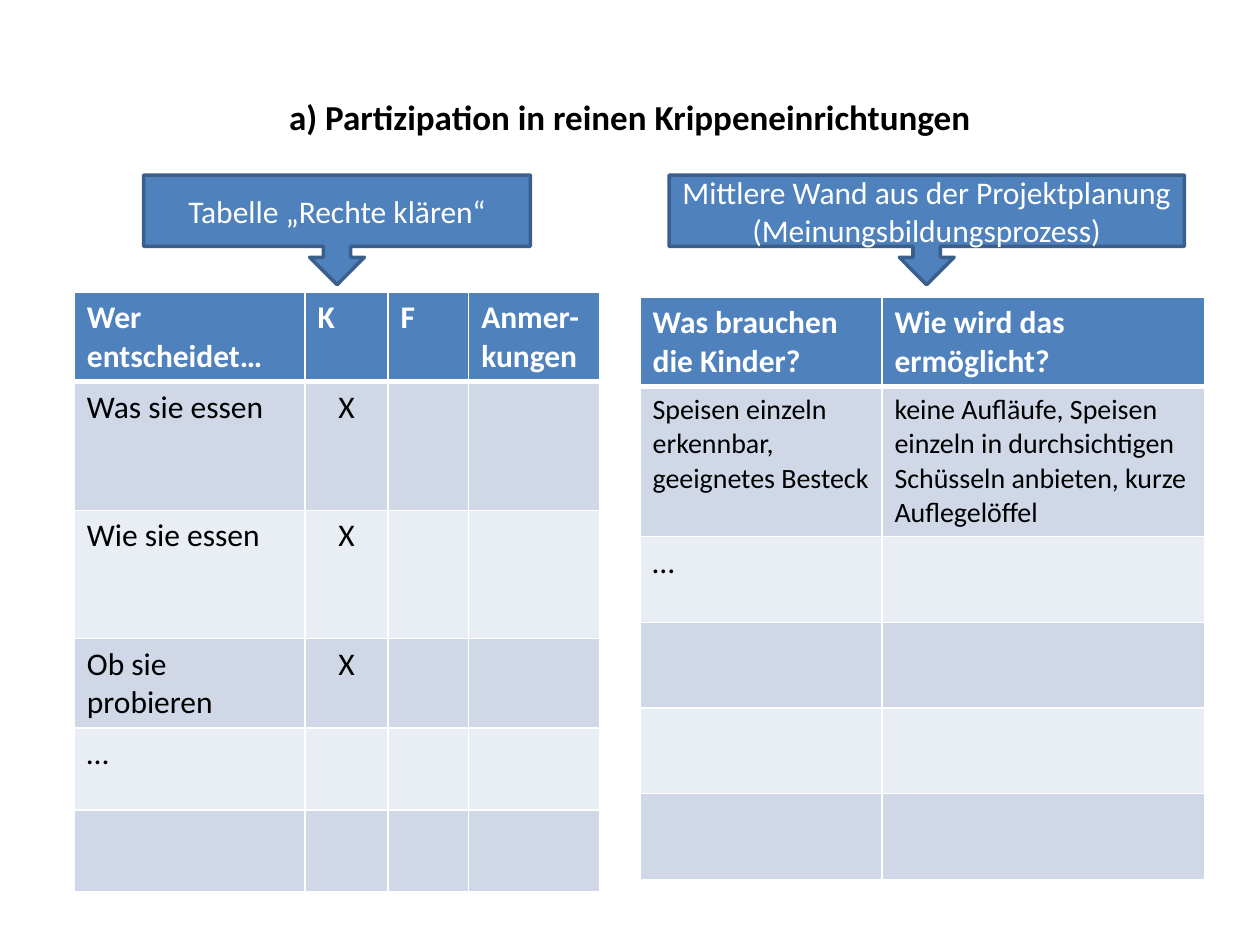
"""Build the slide on participation in nursery settings."""
from dataclasses import dataclass

from lxml.etree import SubElement
from pptx import Presentation
from pptx.dml.color import RGBColor
from pptx.enum.shapes import MSO_SHAPE
from pptx.enum.text import MSO_ANCHOR, PP_ALIGN
from pptx.oxml.ns import qn
from pptx.util import Inches, Pt

FONT = "Calibri"
COLORS = {
    "blue": "4F81BD",
    "outline": "3A5F8C",
    "band_dark": "D0D8E8",
    "band_light": "E9EDF4",
    "white": "FFFFFF",
    "black": "000000",
}


@dataclass
class Callout:
    left: float
    width: float
    text: str


@dataclass
class Grid:
    left: float
    top: float
    cols: list[float]
    rows: list[float]
    texts: list[list[str]]
    centered_col: int | None = None
    small_row: int | None = None


CALLOUTS = [
    Callout(1.14, 3.07, "Tabelle „Rechte klären“"),
    Callout(5.31, 4.09, "Mittlere Wand aus der Projektplanung (Meinungsbildungsprozess)"),
]
GRIDS = [
    Grid(0.59, 2.32, [1.83, 0.66, 0.64, 1.04], [0.71, 1.02, 1.02, 0.71, 0.65, 0.65], [
        ["Wer entscheidet…", "K", "F", "Anmer-kungen"],
        ["Was sie essen", "X"],
        ["Wie sie essen", "X"],
        ["Ob sie probieren", "X"],
        ["…"],
    ], centered_col=1),
    Grid(5.08, 2.36, [1.92, 2.56], [0.71, 1.19, 0.68, 0.68, 0.68, 0.68], [
        ["Was brauchen die Kinder?", "Wie wird das ermöglicht?"],
        ["Speisen einzeln erkennbar, geeignetes Besteck",
         "keine Aufläufe, Speisen einzeln in durchsichtigen Schüsseln anbieten, "
         "kurze Auflegelöffel"],
        ["…"],
    ], small_row=1),
]


def rgb(name: str) -> RGBColor:
    """Return a named colour."""
    return RGBColor.from_string(COLORS[name])


def add_text(tf, text: str, color: str, size: int = 18, bold: bool = False,
             align=PP_ALIGN.LEFT) -> None:
    """Write one run into the first paragraph of a text frame."""
    p = tf.paragraphs[0]
    p.alignment = align
    r = p.add_run()
    r.text = text
    r.font.name = FONT
    r.font.size = Pt(size)
    r.font.bold = bold
    r.font.color.rgb = rgb(color)


def add_title(s, text: str) -> None:
    """Draw the centred slide title."""
    tf = s.shapes.add_textbox(Inches(0.5), Inches(0.3), Inches(9), Inches(1.25)).text_frame
    tf.word_wrap = True
    tf.vertical_anchor = MSO_ANCHOR.MIDDLE
    add_text(tf, text, "black", 20, True, PP_ALIGN.CENTER)


def add_callout(s, callout: Callout) -> None:
    """Draw a heading box with an arrow pointing down."""
    sp = s.shapes.add_shape(MSO_SHAPE.DOWN_ARROW_CALLOUT, Inches(callout.left),
                            Inches(1.39), Inches(callout.width), Inches(0.87))
    sp.shadow.inherit = False
    sp.fill.solid()
    sp.fill.fore_color.rgb = rgb("blue")
    sp.line.color.rgb = rgb("outline")
    sp.line.width = Pt(2)
    tf = sp.text_frame
    tf.word_wrap = True
    tf.vertical_anchor = MSO_ANCHOR.MIDDLE
    add_text(tf, callout.text, "white", align=PP_ALIGN.CENTER)


def set_borders(cell, widths: dict[str, int]) -> None:
    """Give a cell white borders with the given widths in points."""
    tcPr = cell._tc.get_or_add_tcPr()
    for side, width in widths.items():
        ln = SubElement(tcPr, qn(f"a:ln{side}"), w=str(Pt(width)))
        fill = SubElement(ln, qn("a:solidFill"))
        SubElement(fill, qn("a:srgbClr"), val=COLORS["white"])


def add_grid(s, grid: Grid) -> None:
    """Draw a table with a header row and banded body rows."""
    table = s.shapes.add_table(len(grid.rows), len(grid.cols), Inches(grid.left),
                               Inches(grid.top), Inches(sum(grid.cols)),
                               Inches(sum(grid.rows))).table
    for col, width in zip(table.columns, grid.cols):
        col.width = Inches(width)
    for i, height in enumerate(grid.rows):
        table.rows[i].height = Inches(height)
        header = i == 0
        band = "blue" if header else "band_dark" if i % 2 else "band_light"
        texts = grid.texts[i] if i < len(grid.texts) else []
        for j in range(len(grid.cols)):
            cell = table.cell(i, j)
            set_borders(cell, {"L": 1, "R": 1, "T": 3 if i == 1 else 1, "B": 3 if header else 1})
            cell.fill.solid()
            cell.fill.fore_color.rgb = rgb(band)
            if j < len(texts):
                centered = j == grid.centered_col and not header
                add_text(cell.text_frame, texts[j], "white" if header else "black",
                         16 if i == grid.small_row else 18, header,
                         PP_ALIGN.CENTER if centered else PP_ALIGN.LEFT)


def main() -> None:
    """Build and save the slide."""
    prs = Presentation()
    prs.slide_width, prs.slide_height = Inches(10), Inches(7.5)
    s = prs.slides.add_slide(prs.slide_layouts[6])
    add_title(s, "a) Partizipation in reinen Krippeneinrichtungen")
    for grid in GRIDS:
        add_grid(s, grid)
    for callout in CALLOUTS:
        add_callout(s, callout)
    prs.save("out.pptx")


if __name__ == "__main__":
    main()
